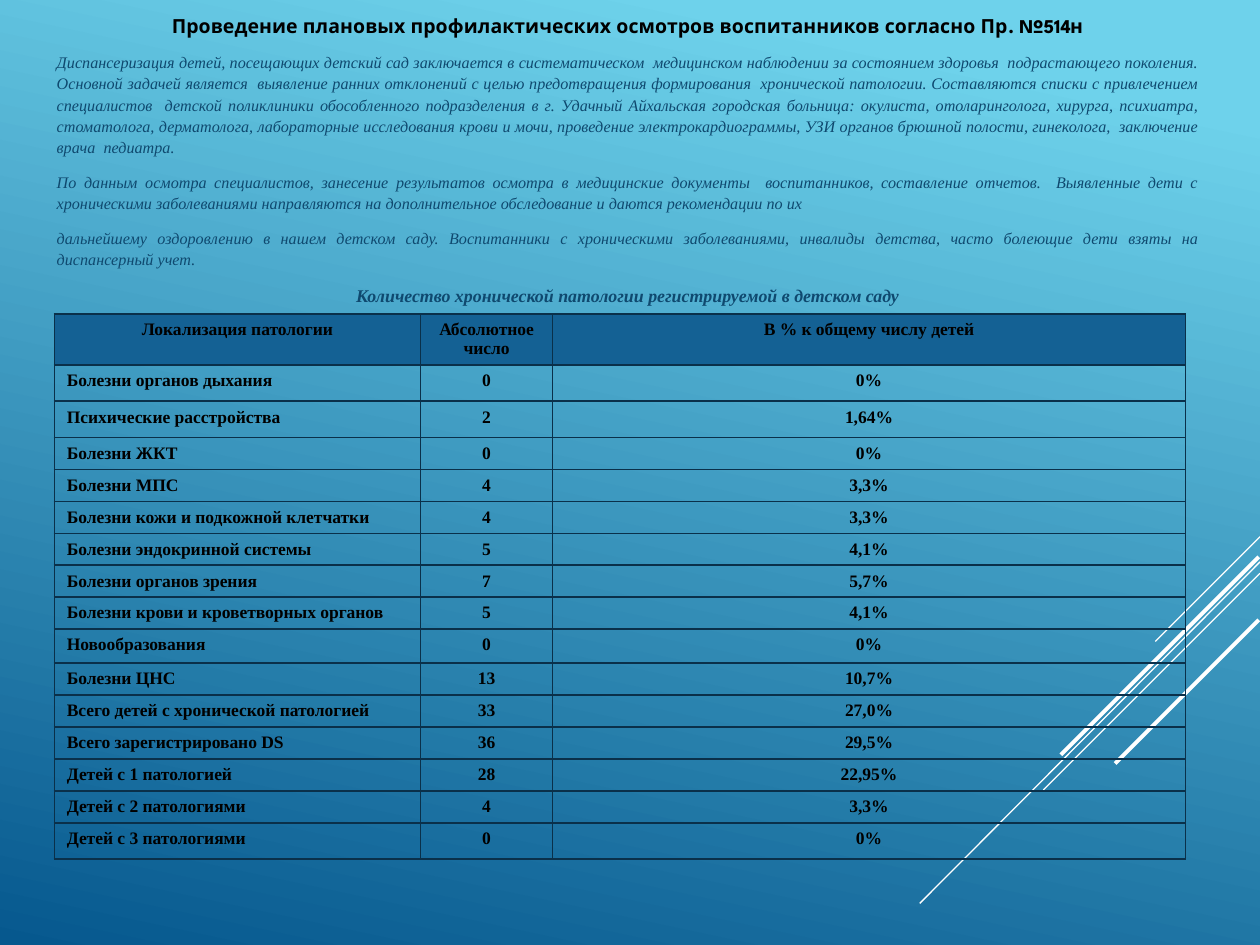
from dataclasses import dataclass

from lxml.etree import SubElement
from pptx import Presentation
from pptx.dml.color import RGBColor
from pptx.enum.shapes import MSO_CONNECTOR
from pptx.enum.text import MSO_ANCHOR, MSO_AUTO_SIZE, PP_ALIGN as Align
from pptx.oxml.ns import qn
from pptx.util import Pt


@dataclass(frozen=True)
class Theme:
    sky: str = "6ED2EB"
    deep: str = "06588E"
    ray: str = "FFFFFF"
    ink: str = "000000"
    prose: str = "0F496F"
    header: str = "146194"
    border: str = "0A304A"
    heading_font: str = "League Spartan"
    text_font: str = "Times New Roman"
    heading_size: float = 11.1
    prose_size: float = 9.2
    caption_size: float = 10.2
    table_size: float = 10


@dataclass(frozen=True)
class Ray:
    x1: float
    y1: float
    x2: float
    y2: float
    weight: float = 0.75


@dataclass(frozen=True)
class Passage:
    text: str
    align: Align
    style: dict


THEME = Theme()
HEADING = dict(name=THEME.heading_font, size=Pt(THEME.heading_size), bold=True, italic=False, color=THEME.ink)
PROSE = dict(name=THEME.text_font, size=Pt(THEME.prose_size), bold=False, italic=True, color=THEME.prose)
CAPTION = PROSE | dict(size=Pt(THEME.caption_size), bold=True)
ENTRY = dict(name=THEME.text_font, size=Pt(THEME.table_size), bold=True, color=THEME.ink)

RAYS = [
    Ray(720, 306.7, 660.2, 366.5),
    Ray(720, 321.1, 525.6, 516.2),
    Ray(720, 327.6, 596.2, 451.4),
    Ray(719.3, 318.2, 606.2, 431.3, 2.25),
    Ray(719.3, 354.2, 637.2, 436.3, 2.25),
]

PASSAGES = [
    Passage("Проведение плановых профилактических осмотров воспитанников согласно Пр. №514н", Align.CENTER, HEADING),
    Passage(
        "Диспансеризация детей, посещающих детский сад заключается в систематическом  медицинском наблюдении "
        "за состоянием здоровья  подрастающего поколения. Основной задачей является  выявление ранних отклонений "
        "с целью предотвращения формирования  хронической патологии. Составляются списки с привлечением "
        "специалистов  детской поликлиники обособленного подразделения в г. Удачный Айхальская городская больница: "
        "окулиста, отоларинголога, хирурга, психиатра, стоматолога, дерматолога, лабораторные исследования крови "
        "и мочи, проведение электрокардиограммы, УЗИ органов брюшной полости, гинеколога,  заключение врача  "
        "педиатра.", Align.JUSTIFY, PROSE),
    Passage(
        "По данным осмотра специалистов, занесение результатов осмотра в медицинские документы  воспитанников, "
        "составление отчетов.  Выявленные дети с хроническими заболеваниями направляются на дополнительное "
        "обследование и даются рекомендации по их", Align.JUSTIFY, PROSE),
    Passage(
        "дальнейшему оздоровлению в нашем детском саду. Воспитанники с хроническими заболеваниями, инвалиды "
        "детства, часто болеющие дети взяты на диспансерный учет.", Align.JUSTIFY, PROSE),
    Passage("Количество хронической патологии регистрируемой в детском саду", Align.CENTER, CAPTION),
]

PATHOLOGIES = [
    ("Локализация патологии", "Абсолютное число", "В % к общему числу детей"),
    ("Болезни органов дыхания", "0", "0%"),
    ("Психические расстройства", "2", "1,64%"),
    ("Болезни ЖКТ", "0", "0%"),
    ("Болезни МПС", "4", "3,3%"),
    ("Болезни кожи и подкожной клетчатки", "4", "3,3%"),
    ("Болезни эндокринной системы", "5", "4,1%"),
    ("Болезни органов зрения", "7", "5,7%"),
    ("Болезни крови и кроветворных органов", "5", "4,1%"),
    ("Новообразования", "0", "0%"),
    ("Болезни ЦНС", "13", "10,7%"),
    ("Всего детей с хронической патологией", "33", "27,0%"),
    ("Всего зарегистрировано DS", "36", "29,5%"),
    ("Детей с 1 патологией", "28", "22,95%"),
    ("Детей с 2 патологиями", "4", "3,3%"),
    ("Детей с 3 патологиями", "0", "0%"),
]
COLUMN_WIDTHS = (209.3, 75.5, 361.6)
ROW_HEIGHT = 18.25
TALL_ROWS = {0: 29.1, 1: 20.7, 2: 20.7, 9: 19.4, 15: 20.7}


def apply_format(target, values: dict) -> None:
    """Set each value on the target, turning a colour into RGB."""
    for key, value in values.items():
        if key == "color":
            target.color.rgb = RGBColor.from_string(value)
        else:
            setattr(target, key, value)


def paint_background(slide) -> None:
    """Fill the slide with the blue gradient."""
    fill = slide.background.fill
    fill.gradient()
    fill.gradient_angle = 258
    for stop, position, color in zip(fill.gradient_stops, (0.1, 1), (THEME.sky, THEME.deep)):
        stop.position = position
        stop.color.rgb = RGBColor.from_string(color)


def draw_ray(slide, ray: Ray) -> None:
    """Draw one diagonal white line."""
    line = slide.shapes.add_connector(
        MSO_CONNECTOR.STRAIGHT, Pt(ray.x1), Pt(ray.y1), Pt(ray.x2), Pt(ray.y2))
    apply_format(line.line, dict(width=Pt(ray.weight), color=THEME.ray))
    SubElement(line.element.spPr, qn("a:effectLst"))


def write_passages(body, passages: list[Passage]) -> None:
    """Place the body placeholder and write its paragraphs."""
    apply_format(body, dict(left=Pt(25.2), top=Pt(3), width=Pt(666.7), height=Pt(168.5)))
    frame = body.text_frame
    apply_format(frame, dict(auto_size=MSO_AUTO_SIZE.NONE, vertical_anchor=MSO_ANCHOR.TOP, word_wrap=True))
    for index, passage in enumerate(passages):
        paragraph = frame.add_paragraph() if index else frame.paragraphs[0]
        properties = paragraph._p.get_or_add_pPr()
        properties.set("marL", "0")
        properties.set("indent", "0")
        SubElement(properties, qn("a:buNone"))
        apply_format(paragraph, dict(
            alignment=passage.align, line_spacing=1.09, space_before=Pt(2 if index else 0), space_after=Pt(6)))
        run = paragraph.add_run()
        run.text = passage.text
        apply_format(run.font, passage.style)


def add_borders(cell) -> None:
    """Outline all four sides of a cell."""
    properties = cell._tc.get_or_add_tcPr()
    for side in ("lnL", "lnR", "lnT", "lnB"):
        edge = SubElement(properties, qn(f"a:{side}"), w=str(Pt(1)))
        SubElement(SubElement(edge, qn("a:solidFill")), qn("a:srgbClr"), val=THEME.border)


def draw_table(slide, rows: list[tuple[str, str, str]]) -> None:
    """Build the table of pathologies."""
    heights = [TALL_ROWS.get(index, ROW_HEIGHT) for index in range(len(rows))]
    table = slide.shapes.add_table(
        len(rows), len(COLUMN_WIDTHS), Pt(31), Pt(179.3), Pt(sum(COLUMN_WIDTHS)), Pt(sum(heights))).table
    apply_format(table, dict(first_row=False, horz_banding=False))
    for column, width in zip(table.columns, COLUMN_WIDTHS):
        column.width = Pt(width)
    for row_index, (row, height, entries) in enumerate(zip(table.rows, heights, rows)):
        row.height = Pt(height)
        for column_index, (cell, entry) in enumerate(zip(row.cells, entries)):
            add_borders(cell)
            if row_index:
                cell.fill.background()
            else:
                cell.fill.solid()
                cell.fill.fore_color.rgb = RGBColor.from_string(THEME.header)
            paragraph = cell.text_frame.paragraphs[0]
            paragraph.alignment = Align.LEFT if row_index and not column_index else Align.CENTER
            run = paragraph.add_run()
            run.text = entry
            apply_format(run.font, ENTRY)


def main() -> None:
    """Build and save the slide."""
    deck = Presentation()
    apply_format(deck, dict(slide_width=Pt(720), slide_height=Pt(540)))
    slide = deck.slides.add_slide(deck.slide_layouts[1])
    title, body = slide.placeholders
    title.element.getparent().remove(title.element)
    paint_background(slide)
    for ray in RAYS:
        draw_ray(slide, ray)
    body.element.getparent().append(body.element)
    write_passages(body, PASSAGES)
    draw_table(slide, PATHOLOGIES)
    deck.save("out.pptx")


if __name__ == "__main__":
    main()
